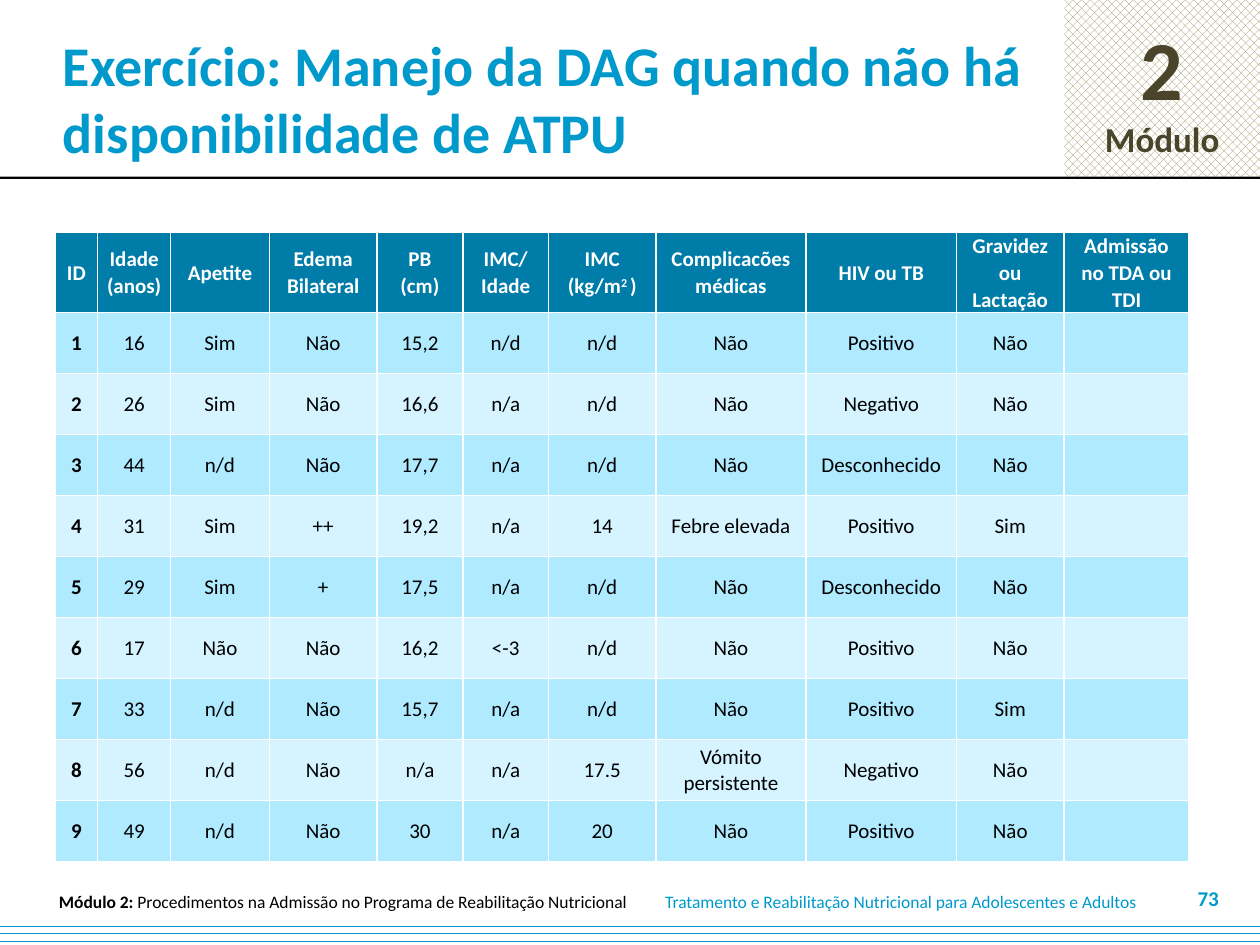
from dataclasses import dataclass

import lxml.etree
import pptx
import pptx.dml.color
import pptx.enum.dml
import pptx.enum.shapes
import pptx.enum.text
import pptx.oxml.ns
import pptx.util

Cm = pptx.util.Cm
Pt = pptx.util.Pt
ALIGN = pptx.enum.text.PP_ALIGN
MIDDLE = pptx.enum.text.MSO_ANCHOR.MIDDLE
PATTERN = pptx.enum.dml.MSO_PATTERN


@dataclass(frozen=True)
class Theme:
    font: str = "Calibri"
    accent: str = "0099CC"
    header: str = "007CA8"
    bands: tuple[str, str] = ("AFEAFF", "D5F4FF")
    white: str = "FFFFFF"
    black: str = "000000"
    badge_text: str = "4A452A"
    badge_hatch: str = "948A54"
    title: int = 32
    badge_number: int = 48
    badge_label: int = 20
    body: int = 12
    footer: int = 10


@dataclass(frozen=True)
class Box:
    """Position and size in centimetres."""
    left: float
    top: float
    width: float
    height: float

    def lengths(self) -> tuple:
        return Cm(self.left), Cm(self.top), Cm(self.width), Cm(self.height)


@dataclass(frozen=True)
class Span:
    text: str
    size: int | None = None
    bold: bool | None = None
    superscript: bool = False


@dataclass(frozen=True)
class Column:
    heading: str | list
    width: float


T = Theme()

COLUMNS = [
    Column("ID", 0.86),
    Column(["Idade", "(anos)"], 1.47),
    Column("Apetite", 1.99),
    Column(["Edema", "Bilateral"], 2.17),
    Column(["PB", "(cm)"], 1.73),
    Column("IMC/ Idade", 1.73),
    Column(["IMC", [Span("(kg/m"), Span("2 ", superscript=True), Span(")")]], 2.16),
    Column(["Complicacões", "médicas"], 3.03),
    Column("HIV ou TB", 3.03),
    Column("Gravidez ou Lactação", 2.17),
    Column("Admissão no TDA ou TDI", 2.52),
]
PATIENTS = [
    ("1", "16", "Sim", "Não", "15,2", "n/d", "n/d", "Não", "Positivo", "Não", ""),
    ("2", "26", "Sim", "Não", "16,6", "n/a", "n/d", "Não", "Negativo", "Não", ""),
    ("3", "44", "n/d", "Não", "17,7", "n/a", "n/d", "Não", "Desconhecido", "Não", ""),
    ("4", "31", "Sim", "++", "19,2", "n/a", "14", "Febre elevada", "Positivo", "Sim", ""),
    ("5", "29", "Sim", "+", "17,5", "n/a", "n/d", "Não", "Desconhecido", "Não", ""),
    ("6", "17", "Não", "Não", "16,2", "<-3", "n/d", "Não", "Positivo", "Não", ""),
    ("7", "33", "n/d", "Não", "15,7", "n/a", "n/d", "Não", "Positivo", "Sim", ""),
    ("8", "56", "n/d", "Não", "n/a", "n/a", "17.5", "Vómito persistente", "Negativo", "Não", ""),
    ("9", "49", "n/d", "Não", "30", "n/a", "20", "Não", "Positivo", "Não", ""),
]
HEADER_HEIGHT, ROW_HEIGHT = 1.62, 1.23


def rgb(color: str) -> pptx.dml.color.RGBColor:
    return pptx.dml.color.RGBColor.from_string(color)


def write(tf, text: str | list, *, size: int, color: str, bold: bool = False,
          align=ALIGN.LEFT, spacing: float | None = None) -> None:
    """Fill a frame; a list holds paragraphs, each a string or a list of spans."""
    for i, content in enumerate([text] if isinstance(text, str) else text):
        p = tf.paragraphs[0] if i == 0 else tf.add_paragraph()
        p.alignment = align
        if spacing:
            p.line_spacing = spacing
        for span in [Span(content)] if isinstance(content, str) else content:
            r = p.add_run()
            r.text = span.text
            r.font.name = T.font
            r.font.size = Pt(span.size or size)
            r.font.bold = bold if span.bold is None else span.bold
            r.font.color.rgb = rgb(color)
            if span.superscript:
                r.font._element.set("baseline", "30000")


def add_text(s, box: Box, text: str | list, *, wrap: bool = True,
             inset: float = 0.25, **style) -> None:
    tf = s.shapes.add_textbox(*box.lengths()).text_frame
    tf.word_wrap = wrap
    tf.vertical_anchor = MIDDLE
    tf.margin_left = Cm(inset)
    write(tf, text, **style)


def add_rect(s, box: Box, color: str, pattern=None):
    sp = s.shapes.add_shape(pptx.enum.shapes.MSO_SHAPE.RECTANGLE, *box.lengths())
    sp.shadow.inherit = False
    sp.line.fill.background()
    if pattern is None:
        sp.fill.solid()
        sp.fill.fore_color.rgb = rgb(color)
    else:
        sp.fill.patterned()
        sp.fill.pattern = pattern
        sp.fill.fore_color.rgb = rgb(color)
        sp.fill.back_color.rgb = rgb(T.white)
    return sp


def format_cell(cell, fill: str) -> None:
    cell.vertical_anchor = MIDDLE
    cell.margin_left = cell.margin_right = Cm(0.18)
    cell.margin_top = cell.margin_bottom = 0
    qn = pptx.oxml.ns.qn
    tc_pr = cell._tc.get_or_add_tcPr()
    for side in ("lnL", "lnR", "lnT", "lnB"):
        ln = lxml.etree.SubElement(tc_pr, qn(f"a:{side}"), w=str(Pt(1)))
        solid = lxml.etree.SubElement(ln, qn("a:solidFill"))
        lxml.etree.SubElement(solid, qn("a:srgbClr"), val=T.white)
    cell.fill.solid()
    cell.fill.fore_color.rgb = rgb(fill)


def add_patient_table(s, left: float, top: float) -> None:
    box = Box(left, top, sum(c.width for c in COLUMNS),
              HEADER_HEIGHT + ROW_HEIGHT * len(PATIENTS))
    table = s.shapes.add_table(len(PATIENTS) + 1, len(COLUMNS), *box.lengths()).table
    for row in table.rows:
        row.height = Cm(ROW_HEIGHT)
    table.rows[0].height = Cm(HEADER_HEIGHT)

    for j, column in enumerate(COLUMNS):
        table.columns[j].width = Cm(column.width)
        cell = table.cell(0, j)
        format_cell(cell, T.header)
        write(cell.text_frame, column.heading, size=T.body, color=T.white,
              bold=True, align=ALIGN.CENTER, spacing=1.05)
    for i, patient in enumerate(PATIENTS):
        for j, value in enumerate(patient):
            cell = table.cell(i + 1, j)
            format_cell(cell, T.bands[i % 2])
            write(cell.text_frame, value, size=T.body, color=T.black,
                  bold=j == 0, align=ALIGN.CENTER)


def main() -> None:
    prs = pptx.Presentation()
    prs.slide_width, prs.slide_height = Cm(25.4), Cm(19.05)
    s = prs.slides.add_slide(prs.slide_layouts[6])

    badge = add_rect(s, Box(21.46, 0, 3.94, 3.56), T.badge_hatch, PATTERN.PERCENT_50)
    badge.text_frame.vertical_anchor = MIDDLE
    write(badge.text_frame, ["2", [Span("Módulo", size=T.badge_label)]],
          size=T.badge_number, color=T.badge_text, bold=True, align=ALIGN.CENTER)
    add_rect(s, Box(0, 3.56, 25.4, 0.05), T.black)
    add_rect(s, Box(0, 18.52, 25.4, 0.53), T.accent, PATTERN.DASHED_HORIZONTAL)

    add_text(s, Box(13.16, 17.91, 10.29, 0.51),
             "Tratamento e Reabilitação Nutricional para Adolescentes e Adultos",
             wrap=False, size=T.footer, color=T.accent)
    add_text(s, Box(0.74, 17.91, 12.34, 0.51),
             [[Span("Módulo 2: ", bold=True),
               Span("Procedimentos na Admissão no Programa de Reabilitação Nutricional")]],
             wrap=False, size=T.footer, color=T.black, align=ALIGN.CENTER)
    add_text(s, Box(0, 0, 21.79, 3.94),
             "Exercício: Manejo da DAG quando não há disponibilidade de ATPU",
             inset=1.27, size=T.title, color=T.accent, bold=True)
    add_text(s, Box(23.55, 17.78, 1.27, 0.64), "73", size=T.body, color=T.accent,
             bold=True, align=ALIGN.RIGHT)
    add_patient_table(s, 1.11, 4.68)

    prs.save("out.pptx")


if __name__ == "__main__":
    main()
